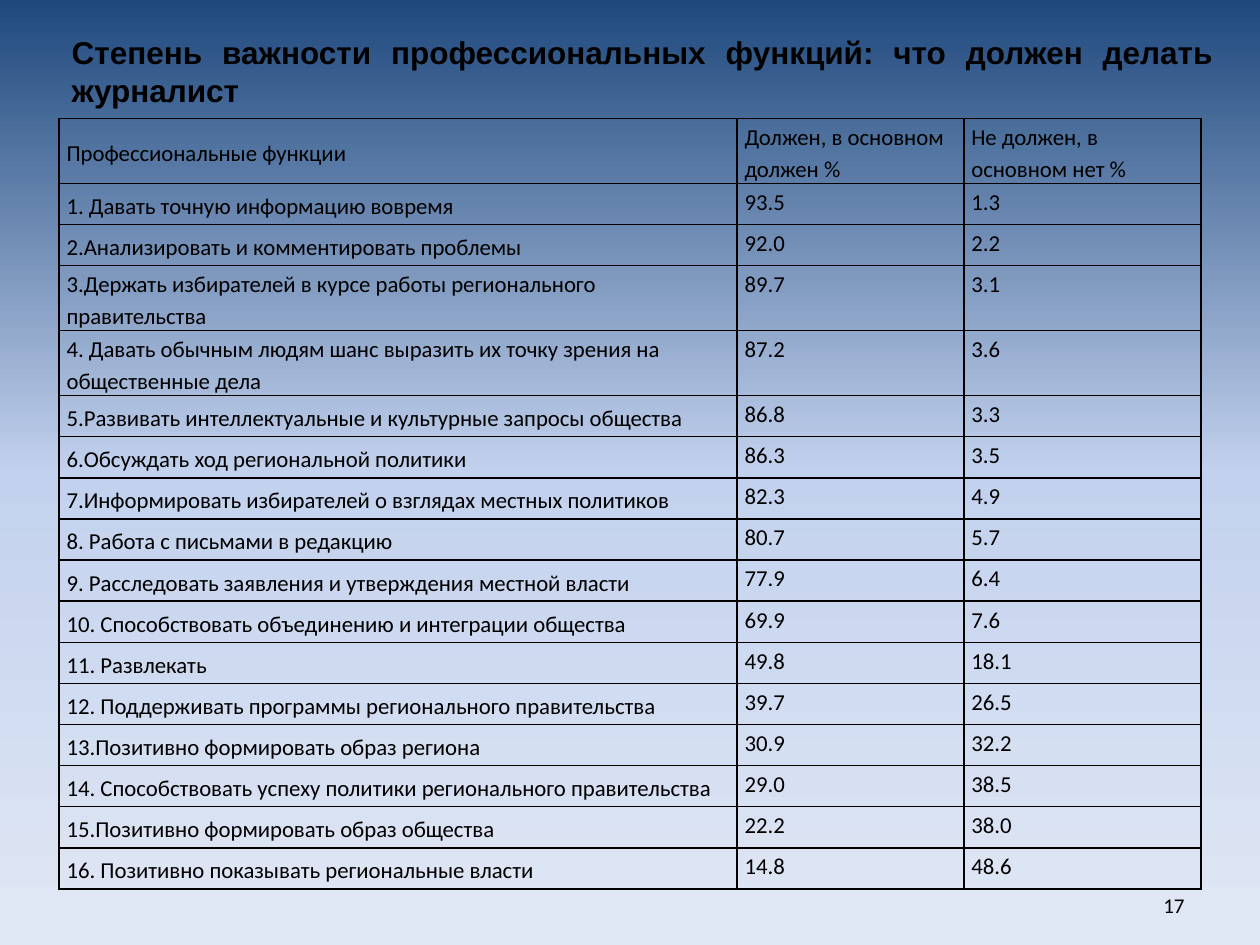
from copy import deepcopy

from lxml import etree
from pptx import Presentation
from pptx.dml.color import RGBColor
from pptx.enum import text as t
from pptx.oxml.ns import qn
from pptx.util import Pt

# Content
TITLE = "Степень важности профессиональных функций: что должен делать журналист"
PAGE = "17"
HEAD = ("Профессиональные функции", "Должен, в основном должен %",
        "Не должен, в основном нет %")
ROWS = [
    ("1. Давать точную информацию вовремя", "93.5", "1.3"),
    ("2.Анализировать и комментировать проблемы", "92.0", "2.2"),
    ("3.Держать избирателей в курсе работы регионального правительства", "89.7", "3.1"),
    ("4. Давать обычным людям шанс выразить их точку зрения на общественные дела",
     "87.2", "3.6"),
    ("5.Развивать интеллектуальные и культурные запросы общества", "86.8", "3.3"),
    ("6.Обсуждать ход региональной политики", "86.3", "3.5"),
    ("7.Информировать избирателей о взглядах местных политиков", "82.3", "4.9"),
    ("8. Работа с письмами в редакцию", "80.7", "5.7"),
    ("9. Расследовать заявления и утверждения местной власти", "77.9", "6.4"),
    ("10. Способствовать объединению и интеграции общества", "69.9", "7.6"),
    ("11. Развлекать", "49.8", "18.1"),
    ("12. Поддерживать программы регионального правительства", "39.7", "26.5"),
    ("13.Позитивно формировать образ региона", "30.9", "32.2"),
    ("14. Способствовать успеху политики регионального правительства", "29.0", "38.5"),
    ("15.Позитивно формировать образ общества", "22.2", "38.0"),
    ("16. Позитивно показывать региональные власти", "14.8", "48.6"),
]
COLORS = {"ink": "000000", "top": "1F497D", "mid": "C2D1ED", "low": "E1E8F5"}
WIDTHS = (387.4, 129.6, 135.6)
LOW, TALL = 23.5, 36.6   # one-line and two-line rows
TWO_LINE = {0, 3, 4}
LEFT, TOP = 33.8, 67.7


def place(shape, x, y, w, h):
    shape.left, shape.top, shape.width, shape.height = map(Pt, (x, y, w, h))


def write(frame, words, size, font="Calibri", bold=False, align=None, gap=None):
    para = frame.paragraphs[0]
    para.alignment, para.line_spacing = align, gap
    run = para.add_run()
    run.text = words
    run.font.name, run.font.size, run.font.bold = font, Pt(size), bold
    run.font.color.rgb = RGBColor.from_string(COLORS["ink"])


def border(cell):
    props = cell._tc.get_or_add_tcPr()
    for i, side in enumerate(("lnL", "lnR", "lnT", "lnB")):
        line = etree.Element(qn("a:" + side), w=str(Pt(1)))
        fill = etree.SubElement(line, qn("a:solidFill"))
        etree.SubElement(fill, qn("a:srgbClr"), val=COLORS["ink"])
        props.insert(i, line)


deck = Presentation()
deck.slide_width, deck.slide_height = Pt(720), Pt(540)
slide = deck.slides.add_slide(deck.slide_layouts[5])

# Background gradient, top to bottom
back = slide.background.fill
back.gradient()
back.gradient_angle = 270
stops = slide.element.find(".//" + qn("a:gsLst"))
stops.append(deepcopy(stops[0]))
for stop, name, pos in zip(back.gradient_stops, ("top", "mid", "low"), (0, 0.5, 1)):
    stop.color.rgb = RGBColor.from_string(COLORS[name])
    stop.position = pos

# Title
title = slide.shapes.title
place(title, LEFT, 25.9, 666.7, 28.8)
frame = title.text_frame
frame.word_wrap, frame.auto_size = True, t.MSO_AUTO_SIZE.NONE
frame.vertical_anchor = t.MSO_ANCHOR.MIDDLE
write(frame, TITLE, 18, "Arial", True, t.PP_ALIGN.JUSTIFY)

# Table
data = [HEAD] + ROWS
highs = [TALL if i in TWO_LINE else LOW for i in range(len(data))]
table = slide.shapes.add_table(len(data), len(HEAD), Pt(LEFT), Pt(TOP),
                               Pt(sum(WIDTHS)), Pt(sum(highs))).table
table.first_row = table.horz_banding = False
for col, wide in zip(table.columns, WIDTHS):
    col.width = Pt(wide)
for row, high, words in zip(table.rows, highs, data):
    row.height = Pt(high)
    for c, (cell, word) in enumerate(zip(row.cells, words)):
        cell.fill.background()
        cell.margin_left = cell.margin_right = Pt(4.3)
        cell.margin_top, cell.margin_bottom = Pt(0.7), Pt(0)
        cell.vertical_anchor = t.MSO_ANCHOR.TOP if c else t.MSO_ANCHOR.MIDDLE
        write(cell.text_frame, word, 13, gap=1.15)
        border(cell)

# Page number
page = slide.shapes.add_textbox(Pt(516), Pt(492), Pt(168), Pt(36)).text_frame
page.word_wrap = True
page.vertical_anchor = t.MSO_ANCHOR.BOTTOM
write(page, PAGE, 12, align=t.PP_ALIGN.RIGHT)

deck.save("out.pptx")
